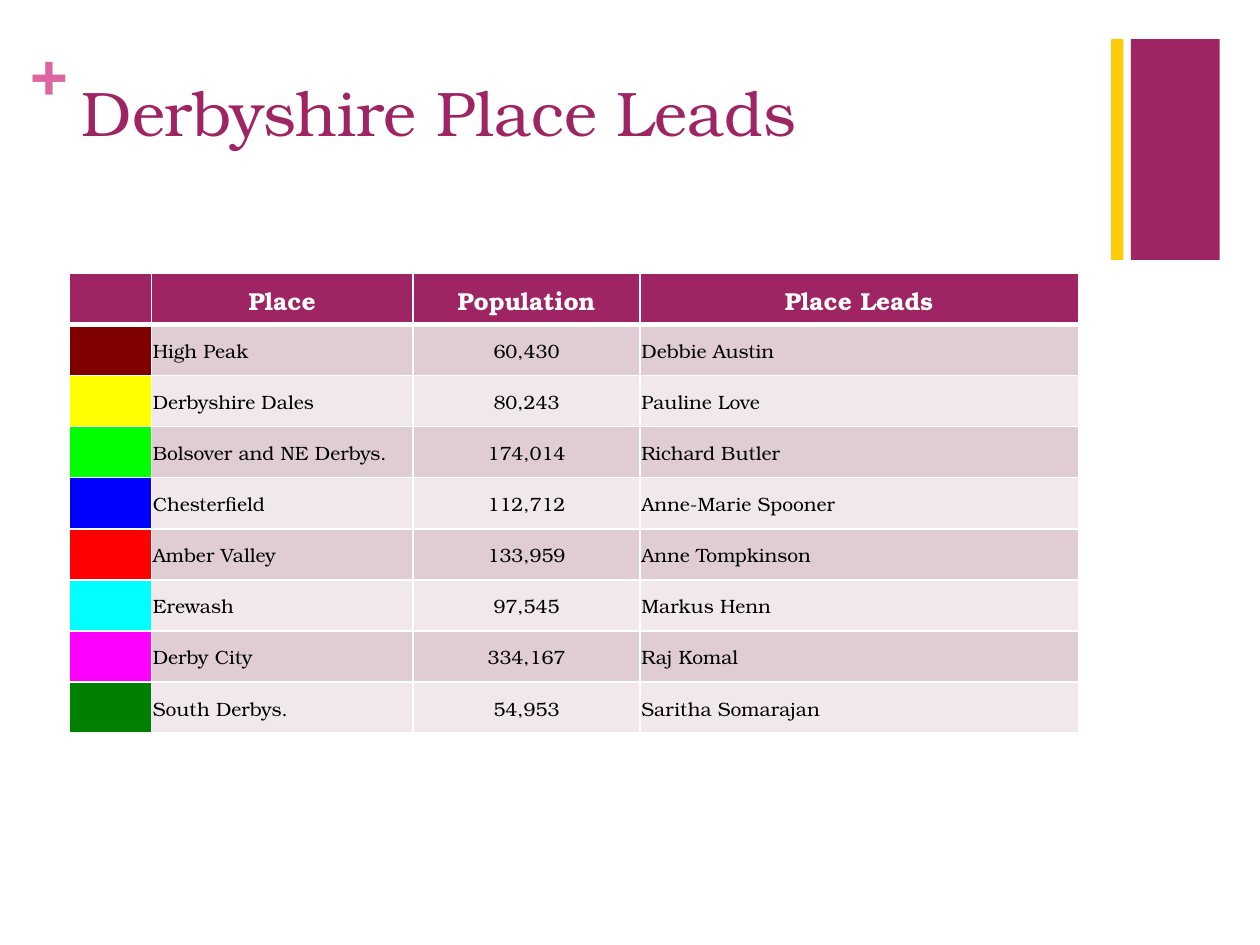
from lxml.etree import SubElement
from pptx import Presentation
from pptx.dml.color import RGBColor
from pptx.enum.shapes import MSO_SHAPE
from pptx.enum.text import MSO_ANCHOR, PP_ALIGN
from pptx.oxml.ns import qn
from pptx.util import Cm, Pt

FONT = "TeX Gyre Bonum"
HUES = {"plum": "9F2463", "pink": "DC65A2", "gold": "FCCC0B",
        "white": "FFFFFF", "black": "000000",
        "dark": "DFCDD3", "light": "F0E8EA"}
HEADS = ["", "Place", "Population", "Place Leads"]
PLACES = [
    ("800000", "High Peak", "60,430", "Debbie Austin"),
    ("FFFF00", "Derbyshire Dales", "80,243", "Pauline Love"),
    ("00FF00", "Bolsover and NE Derbys.", "174,014", "Richard Butler"),
    ("0000FF", "Chesterfield", "112,712", "Anne-Marie Spooner"),
    ("FF0000", "Amber Valley", "133,959", "Anne Tompkinson"),
    ("00FFFF", "Erewash", "97,545", "Markus Henn"),
    ("FF00FF", "Derby City", "334,167", "Raj Komal"),
    ("008000", "South Derbys.", "54,953", "Saritha Somarajan"),
]
WIDTHS = [1.65, 5.28, 4.57, 8.84]
ROW = 1.03
INSETS = {"margin_left": Cm(0.03), "margin_right": Cm(0.03),
          "margin_top": Cm(0.03), "margin_bottom": 0,
          "vertical_anchor": MSO_ANCHOR.MIDDLE}


def assign(item, values):
    for name, value in values.items():
        setattr(item, name, value)


def paint(item, hue):
    item.fill.solid()
    item.fill.fore_color.rgb = RGBColor.from_string(hue)


def write(frame, text, size, hue, bold=False, align=PP_ALIGN.LEFT):
    line = frame.paragraphs[0]
    line.alignment = align
    run = line.add_run()
    run.text = text
    assign(run.font, {"name": FONT, "size": Pt(size), "bold": bold})
    run.font.color.rgb = RGBColor.from_string(HUES[hue])


def label(slide, box, text, hue, insets, bold=False):
    frame = slide.shapes.add_textbox(*map(Cm, box)).text_frame
    sides, ends = map(Cm, insets)
    assign(frame, {"word_wrap": True, "vertical_anchor": MSO_ANCHOR.TOP,
                   "margin_left": sides, "margin_right": sides,
                   "margin_top": ends, "margin_bottom": ends})
    write(frame, text, 36, hue, bold)


def header(slide, left, top, width, height):
    label(slide, (left, top, 0.74, 1.55), "+", "pink", (0, 0), True)
    label(slide, (left + 0.79, top + 0.71, width - 0.79, height - 0.71),
          "Derbyshire Place Leads", "plum", (0.25, 0.13))


def corner(slide, left, top, width, height):
    """Draw the thin gold bar and the wide plum block beside it."""
    thin, gap = 0.25, 0.15
    wide = width - thin - gap
    for start, span, hue in ((0, thin, "gold"), (thin + gap, wide, "plum")):
        bar = slide.shapes.add_shape(
            MSO_SHAPE.RECTANGLE, Cm(left + start), Cm(top), Cm(span), Cm(height))
        bar.shadow.inherit = False
        paint(bar, HUES[hue])
        bar.line.fill.background()


def edge(cell, top, bottom):
    """Give a cell white borders, 1 pt at the sides."""
    props = cell._tc.get_or_add_tcPr()
    for side, size in (("L", 1), ("R", 1), ("T", top), ("B", bottom)):
        line = SubElement(props, qn(f"a:ln{side}"), w=str(Pt(size)))
        fill = SubElement(line, qn("a:solidFill"))
        SubElement(fill, qn("a:srgbClr"), val=HUES["white"])


def leads(slide, left, top):
    rows = [HEADS] + [("", *place[1:]) for place in PLACES]
    table = slide.shapes.add_table(
        len(rows), len(WIDTHS), Cm(left), Cm(top),
        Cm(sum(WIDTHS)), Cm(ROW * len(rows))).table
    for col, width in zip(table.columns, WIDTHS):
        col.width = Cm(width)
    for r, texts in enumerate(rows):
        table.rows[r].height = Cm(ROW)
        head = r == 0
        band = HUES["plum" if head else "dark" if r % 2 else "light"]
        size, hue = (14, "white") if head else (11, "black")
        for c, text in enumerate(texts):
            cell = table.cell(r, c)
            assign(cell, INSETS)
            edge(cell, 3 if r == 1 else 1, 3 if head else 1)
            paint(cell, band if head or c else PLACES[r - 1][0])
            if text:
                mid = head or c == 2
                write(cell.text_frame, text, size, hue, head,
                      PP_ALIGN.CENTER if mid else PP_ALIGN.LEFT)


def main():
    deck = Presentation()
    assign(deck, {"slide_width": Cm(25.4), "slide_height": Cm(19.05)})
    slide = deck.slides.add_slide(deck.slide_layouts[6])
    corner(slide, 22.4, 0.79, 2.19, 4.45)
    header(slide, 0.61, 0.64, 21.77, 3.81)
    leads(slide, 1.4, 5.51)
    deck.save("out.pptx")


if __name__ == "__main__":
    main()
